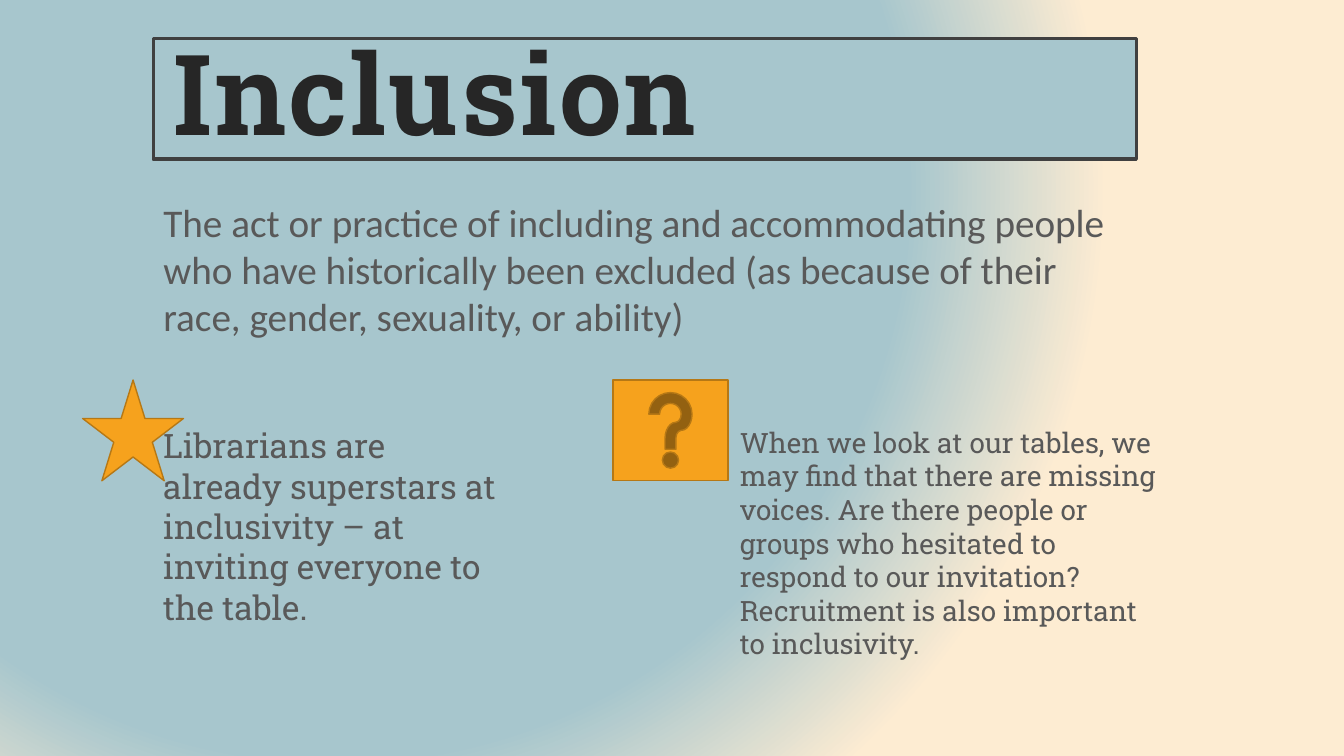
from pptx import Presentation
from pptx.dml.color import RGBColor
from pptx.enum.shapes import MSO_SHAPE
from pptx.enum.text import MSO_ANCHOR, MSO_AUTO_SIZE, PP_ALIGN
from pptx.oxml import parse_xml
from pptx.oxml.ns import nsdecls
from pptx.util import Inches, Pt

STAR, HELP = MSO_SHAPE.STAR_5_POINT, MSO_SHAPE.ACTION_BUTTON_HELP
TOP, MIDDLE = MSO_ANCHOR.TOP, MSO_ANCHOR.MIDDLE
NO_FIT, GROW = MSO_AUTO_SIZE.NONE, MSO_AUTO_SIZE.SHAPE_TO_FIT_TEXT
LEFT = PP_ALIGN.LEFT

SLAB, SANS = "Roboto Slab", "Calibri"
BLUE, CREAM, ORANGE, BROWN = "A7C6CD", "FDECD2", "F6A21D", "B67815"
INK, FRAME, GRAY = "262626", "404040", "595959"

TITLE = "Inclusion"
DEFINITION = (
    "The act or practice of including and accommodating people who have "
    "historically been excluded (as because of their race, gender, sexuality, "
    "or ability)"
)
NOTES = [
    ("Librarians are already superstars at inclusivity – at inviting everyone "
     "to the table.", 24, (1.52, 4.17, 3.64, 2.12), STAR, (0.82, 3.77, 1, 1)),
    ("When we look at our tables, we may find that there are missing voices. "
     "Are there people or groups who hesitated to respond to our invitation? "
     "Recruitment is also important to inclusivity.",
     20, (7.24, 4.17, 4.37, 2.46), HELP, (6.08, 3.77, 1.14, 1)),
]
BACKGROUND = f"""
<p:bg {nsdecls("p", "a")}><p:bgPr>
  <a:gradFill rotWithShape="1">
    <a:gsLst>
      <a:gs pos="74000"><a:srgbClr val="{BLUE}"/></a:gs>
      <a:gs pos="100000"><a:srgbClr val="{CREAM}"/></a:gs>
    </a:gsLst>
    <a:path path="circle">
      <a:fillToRect l="50000" t="50000" r="100000" b="100000"/>
    </a:path>
  </a:gradFill><a:effectLst/>
</p:bgPr></p:bg>"""


def color(value):
    return RGBColor.from_string(value)


def place(shape, area):
    shape.left, shape.top, shape.width, shape.height = map(Inches, area)


def paint(shape, fill, line, width):
    shape.fill.solid()
    shape.fill.fore_color.rgb = color(fill)
    shape.line.color.rgb = color(line)
    shape.line.width = Pt(width)


def write(box, text, size, face, ink, anchor, fit):
    frame = box.text_frame
    frame.text = text
    frame.word_wrap = True
    frame.auto_size = fit
    frame.vertical_anchor = anchor
    para = frame.paragraphs[0]
    para.alignment = LEFT
    para.font.size = Pt(size)
    para.font.name = face
    para.font.color.rgb = color(ink)
    return para


deck = Presentation()
deck.slide_width, deck.slide_height = Inches(13.33), Inches(7.5)
page = deck.slides.add_slide(deck.slide_layouts[1])
page.element.cSld.insert(0, parse_xml(BACKGROUND))

title = page.shapes.title
place(title, (1.52, 0.38, 9.75, 1.2))
paint(title, BLUE, FRAME, 2.5)
para = write(title, TITLE, 80, SLAB, INK, MIDDLE, NO_FIT)
para.font.bold = True
para.line_spacing = 0.9
para.runs[0].font._element.set("spc", "200")
frame = title.text_frame
frame.margin_left = frame.margin_right = Inches(0.2)
frame.margin_top = frame.margin_bottom = Inches(0.2)

body = page.placeholders[1]
place(body, (1.52, 1.82, 9.75, 1.7))
para = write(body, DEFINITION, 28, SANS, GRAY, MIDDLE, NO_FIT)
para.space_before = Pt(10)
properties = para._p.get_or_add_pPr()
properties.set("marL", "0")
properties.set("indent", "0")
bullet = parse_xml(f"<a:buNone {nsdecls('a')}/>")
properties.find("{*}spcBef").addnext(bullet)

for text, size, text_area, symbol, symbol_area in NOTES:
    box = page.shapes.add_textbox(*map(Inches, text_area))
    write(box, text, size, SLAB, GRAY, TOP, GROW)
    icon = page.shapes.add_shape(symbol, *map(Inches, symbol_area))
    icon.shadow.inherit = False
    paint(icon, ORANGE, BROWN, 1)

deck.save("out.pptx")
